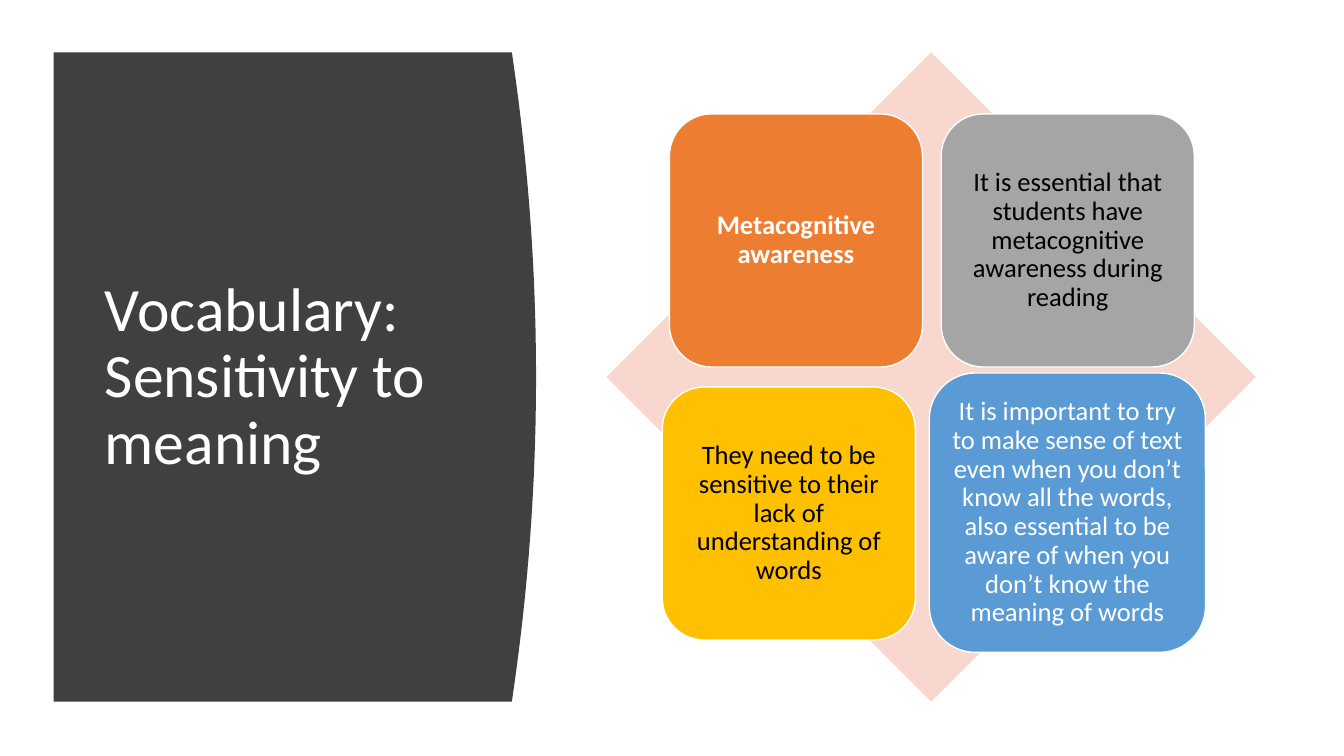
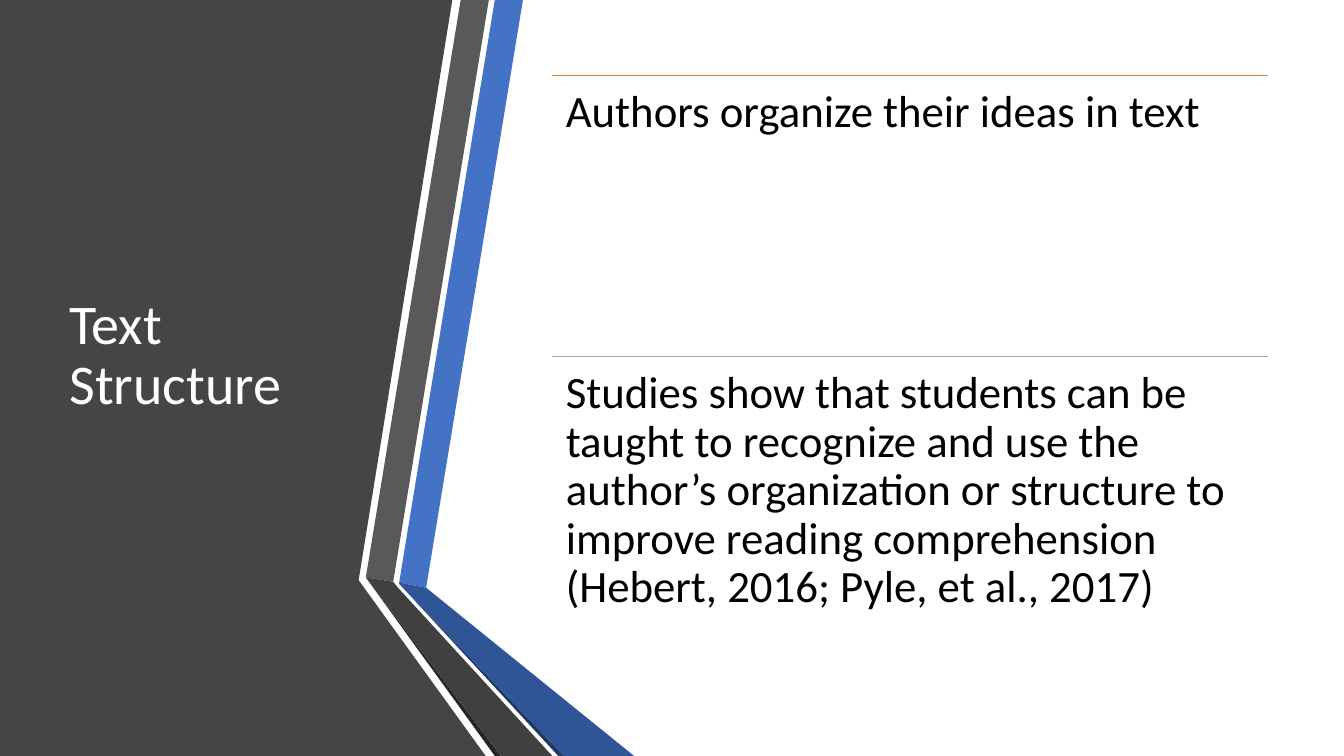
from lxml import etree
from pptx import Presentation
from pptx.dml.color import RGBColor
from pptx.enum.shapes import MSO_CONNECTOR, MSO_SHAPE
from pptx.enum.text import MSO_ANCHOR, MSO_AUTO_SIZE, PP_ALIGN
from pptx.oxml.ns import qn
from pptx.util import Cm, Pt

FONT = "Calibri"
SLIDE_WIDTH, SLIDE_HEIGHT = 33.87, 19.05
COLOURS = {
    "white": "FFFFFF",
    "black": "000000",
    "charcoal": "404040",
    "panel": "454545",
    "mid grey": "595959",
    "deep grey": "262626",
    "grey": "A5A5A5",
    "peach": "F8D7CE",
    "orange": "ED7D31",
    "gold": "FFC000",
    "sky": "5B9BD5",
    "blue": "4472C4",
    "dark blue": "2F5597",
    "navy": "203864",
}

# Cards: text, fill, font colour, bold, (left, top, width, height)
CARDS = [
    ("Metacognitive awareness", "orange", "white", True, (16.87, 2.87, 6.38, 6.38)),
    ("It is essential that students have metacognitive awareness during reading",
     "grey", "black", False, (23.72, 2.87, 6.38, 6.38)),
    ("They need to be sensitive to their lack of understanding of words",
     "gold", "black", False, (16.69, 9.75, 6.38, 6.38)),
    ("It is important to try to make sense of text even when you don’t know all "
     "the words, also essential to be aware of when you don’t know the meaning of words",
     "sky", "white", False, (23.42, 9.4, 6.96, 7.04)),
]

# Folded ribbon: fill and corners of each piece, from back to front
RIBBON = [
    ("panel", [(0, 0), (11.4, 0), (9.04, 14.62), (12.24, SLIDE_HEIGHT), (0, SLIDE_HEIGHT)]),
    ("blue", [(10.06, 14.68), (10.74, 14.81), (13.18, 0), (12.47, 0)]),
    ("mid grey", [(12.32, 0), (11.61, 0), (9.22, 14.55), (9.91, 14.66)]),
    ("deep grey", [(9.22, 14.55), (12.47, SLIDE_HEIGHT), (12.62, SLIDE_HEIGHT)]),
    ("navy", [(10.06, 14.71), (14.07, SLIDE_HEIGHT), (14.22, SLIDE_HEIGHT)]),
    ("dark blue", [(10.06, 14.68), (10.06, 14.71), (14.22, SLIDE_HEIGHT),
                   (15.98, SLIDE_HEIGHT), (10.74, 14.81)]),
    ("charcoal", [(13.92, SLIDE_HEIGHT), (10.03, 14.81), (9.91, 14.66),
                  (9.22, 14.55), (12.62, SLIDE_HEIGHT)]),
]

# Ruled rows: text and line colour
ROWS = [
    ("Authors organize their ideas in text", "orange"),
    ("Studies show that students can be taught to recognize and use the author’s "
     "organization or structure to improve reading comprehension "
     "(Hebert, 2016; Pyle, et al., 2017)", "grey"),
]


def colour(name):
    return RGBColor.from_string(COLOURS[name])


def lengths(*values):
    return [Cm(value) for value in values]


def write_text(shape, text, size, font_colour, align=PP_ALIGN.LEFT,
               anchor=MSO_ANCHOR.MIDDLE, inset=0.25, bold=False):
    frame = shape.text_frame
    frame.word_wrap = True
    frame.auto_size = MSO_AUTO_SIZE.NONE
    frame.vertical_anchor = anchor
    frame.margin_left = frame.margin_right = Cm(inset)
    frame.margin_top = frame.margin_bottom = Cm(inset)
    paragraph = frame.paragraphs[0]
    paragraph.alignment = align
    paragraph.line_spacing = 0.9
    run = paragraph.add_run()
    run.text = text
    run.font.name = FONT
    run.font.size = Pt(size)
    run.font.bold = bold
    run.font.color.rgb = colour(font_colour)


def paint(shape, fill, line=None):
    shape.shadow.inherit = False
    shape.fill.solid()
    shape.fill.fore_color.rgb = colour(fill)
    if line:
        shape.line.color.rgb = colour(line)
        shape.line.width = Pt(1)
    else:
        shape.line.fill.background()


def add_titled_slide(presentation):
    return presentation.slides.add_slide(presentation.slide_layouts[5])


def set_title(slide, text, size, box):
    title = slide.shapes.title
    title.left, title.top, title.width, title.height = lengths(*box)
    write_text(title, text, size, "white")


def add_polygon(slide, points, fill):
    corners = [lengths(*point) for point in points]
    builder = slide.shapes.build_freeform(*corners[0])
    builder.add_line_segments(corners[1:], close=True)
    paint(builder.convert_to_shape(), fill)


def add_card(slide, text, fill, font_colour, bold, box):
    card = slide.shapes.add_shape(MSO_SHAPE.ROUNDED_RECTANGLE, *lengths(*box))
    paint(card, fill, "white")
    write_text(card, text, 19, font_colour, PP_ALIGN.CENTER, inset=0.2, bold=bold)


def add_ruled_row(slide, text, line_colour, left, top, width, height):
    rule = slide.shapes.add_connector(
        MSO_CONNECTOR.STRAIGHT, *lengths(left, top, left + width, top))
    rule.line.color.rgb = colour(line_colour)
    rule.line.width = Pt(1)
    etree.SubElement(rule._element.spPr, qn("a:effectLst"))
    box = slide.shapes.add_textbox(*lengths(left, top, width, height))
    write_text(box, text, 32, "black", anchor=MSO_ANCHOR.TOP, inset=0.34)


def curved_panel_points():
    """Rectangle whose right side bulges as a parabola."""
    left, right, bulge, middle, half = 1.35, 12.9, 0.61, 9.5, 8.18
    steps = [step / 20 for step in range(-20, 21)]
    side = [(right + bulge * (1 - t * t), middle + half * t) for t in steps]
    return [(left, middle - half), *side, (left, middle + half)]


def build_vocabulary_slide(presentation):
    slide = add_titled_slide(presentation)
    add_polygon(slide, curved_panel_points(), "charcoal")
    set_title(slide, "Vocabulary: Sensitivity to meaning", 44, (2.39, 2.82, 9.5, 13.41))
    diamond = slide.shapes.add_shape(
        MSO_SHAPE.DIAMOND, *lengths(15.29, 1.32, 16.36, 16.36))
    paint(diamond, "peach")
    for card in CARDS:
        add_card(slide, *card)
    return slide


def build_structure_slide(presentation):
    slide = add_titled_slide(presentation)
    for fill, points in RIBBON:
        add_polygon(slide, points, fill)
    set_title(slide, "Text Structure", 40, (1.5, 1.9, 7.72, 14.17))
    row_height = 7.09
    for index, (text, line_colour) in enumerate(ROWS):
        add_ruled_row(slide, text, line_colour,
                      13.92, 1.9 + index * row_height, 18.03, row_height)
    return slide


def bring_title_forward(slide):
    """Put the title above the background panels."""
    tree = slide.shapes._spTree
    tree.append(slide.shapes.title._element)


def main():
    presentation = Presentation()
    presentation.slide_width = Cm(SLIDE_WIDTH)
    presentation.slide_height = Cm(SLIDE_HEIGHT)
    for build in (build_vocabulary_slide, build_structure_slide):
        bring_title_forward(build(presentation))
    presentation.save("out.pptx")


if __name__ == "__main__":
    main()
